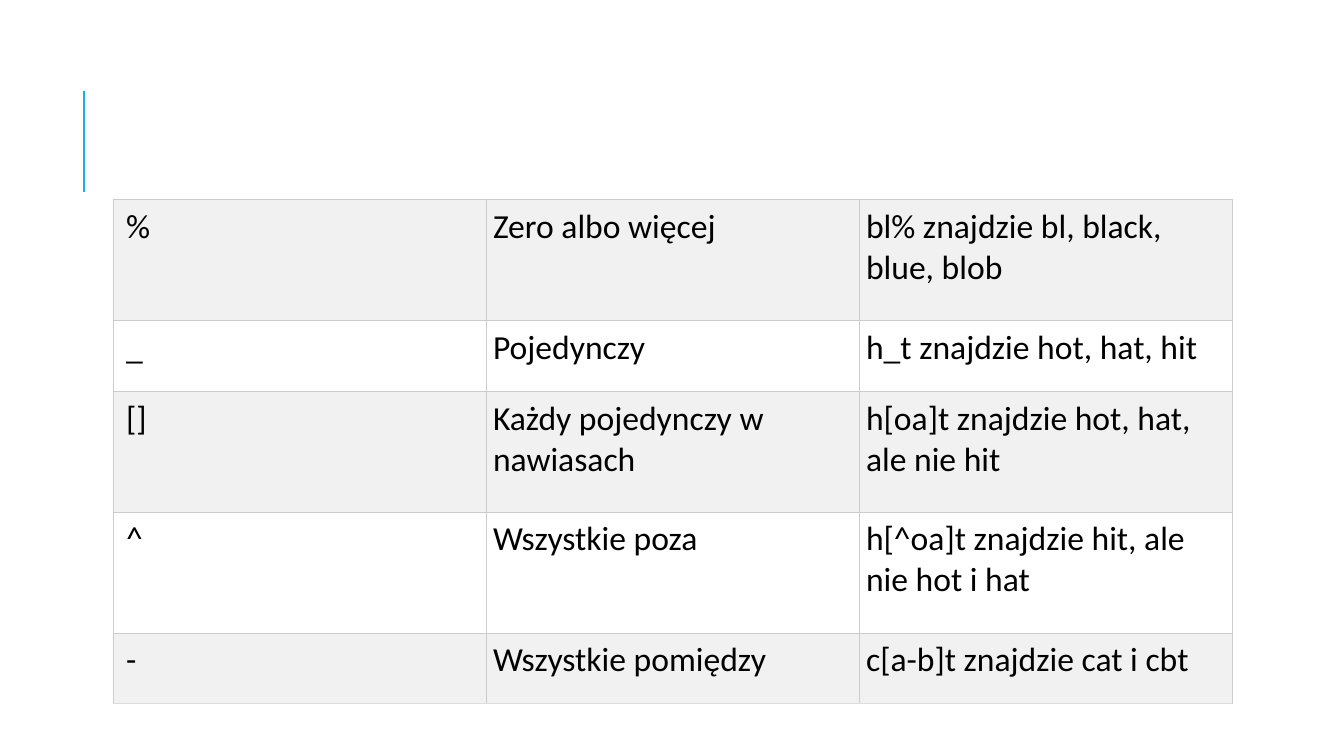
from dataclasses import dataclass

from lxml import etree
from pptx import Presentation, util as u
from pptx.dml import color
from pptx.enum import shapes
from pptx.oxml import ns
from pptx.table import _Cell


@dataclass
class Wildcard:
    symbol: str
    meaning: str
    example: str
    height: float


WILDCARDS = [
    Wildcard("%", "Zero albo więcej", "bl% znajdzie bl, black, blue, blob", 1.2),
    Wildcard("_", "Pojedynczy", "h_t znajdzie hot, hat, hit", 0.7),
    Wildcard("[]", "Każdy pojedynczy w nawiasach", "h[oa]t znajdzie hot, hat, ale nie hit", 1.2),
    Wildcard("^", "Wszystkie poza", "h[^oa]t znajdzie hit, ale nie hot i hat", 1.2),
    Wildcard("-", "Wszystkie pomiędzy", "c[a-b]t znajdzie cat i cbt", 0.7),
]
BANDS = ("F1F1F1", "FFFFFF")
COLUMN_WIDTH = 3.7
PADDING = 0.07
FIRST_PADDING = 0.13


def rgb(value: str) -> color.RGBColor:
    return color.RGBColor.from_string(value)


def set_borders(cell: _Cell, sides: dict[str, str]) -> None:
    tc_pr = cell._tc.get_or_add_tcPr()
    for i, (side, hex_color) in enumerate(sides.items()):
        ln = etree.Element(ns.qn(f"a:ln{side}"), w=str(u.Pt(0.6)))
        fill = etree.SubElement(ln, ns.qn("a:solidFill"))
        etree.SubElement(fill, ns.qn("a:srgbClr"), val=hex_color)
        tc_pr.insert(i, ln)


def format_cell(cell: _Cell, value: str, band: str, left: float, bottom: str) -> None:
    cell.text = value
    cell.margin_left = u.Inches(left)
    cell.margin_top = cell.margin_right = cell.margin_bottom = u.Inches(PADDING)
    cell.fill.solid()
    cell.fill.fore_color.rgb = rgb(band)
    set_borders(cell, {"L": "CCCCCC", "R": "CCCCCC", "T": "CCCCCC", "B": bottom})
    font = cell.text_frame.paragraphs[0].font
    font.name, font.size = "Calibri", u.Pt(24)
    font.color.rgb = rgb("000000")


def add_accent(s) -> None:
    line = s.shapes.add_connector(
        shapes.MSO_CONNECTOR.STRAIGHT,
        u.Inches(0.83), u.Inches(1.9), u.Inches(0.83), u.Inches(0.9))
    line.line.color.rgb = rgb("1CADE4")
    line.line.width = u.Pt(1.5)
    etree.SubElement(line._element.spPr, ns.qn("a:effectLst"))


def add_wildcard_table(s, wildcards: list[Wildcard]) -> None:
    height = sum(w.height for w in wildcards)
    table = s.shapes.add_table(
        len(wildcards), 3, u.Inches(1.12), u.Inches(1.98),
        u.Inches(3 * COLUMN_WIDTH), u.Inches(height)).table
    table.first_row = table.horz_banding = False
    for column in table.columns:
        column.width = u.Inches(COLUMN_WIDTH)
    for i, w in enumerate(wildcards):
        table.rows[i].height = u.Inches(w.height)
        bottom = "DDDDDD" if i == len(wildcards) - 1 else "CCCCCC"
        for j, value in enumerate((w.symbol, w.meaning, w.example)):
            left = PADDING if j else FIRST_PADDING
            format_cell(table.cell(i, j), value, BANDS[i % 2], left, bottom)


def main() -> None:
    """Build the slide with the table of SQL wildcards."""
    prs = Presentation()
    prs.slide_width, prs.slide_height = u.Inches(13.33), u.Inches(7.5)
    s = prs.slides.add_slide(prs.slide_layouts[6])
    s.background.fill.solid()
    s.background.fill.fore_color.rgb = rgb("FFFFFF")
    add_accent(s)
    add_wildcard_table(s, WILDCARDS)
    prs.save("out.pptx")


if __name__ == "__main__":
    main()
